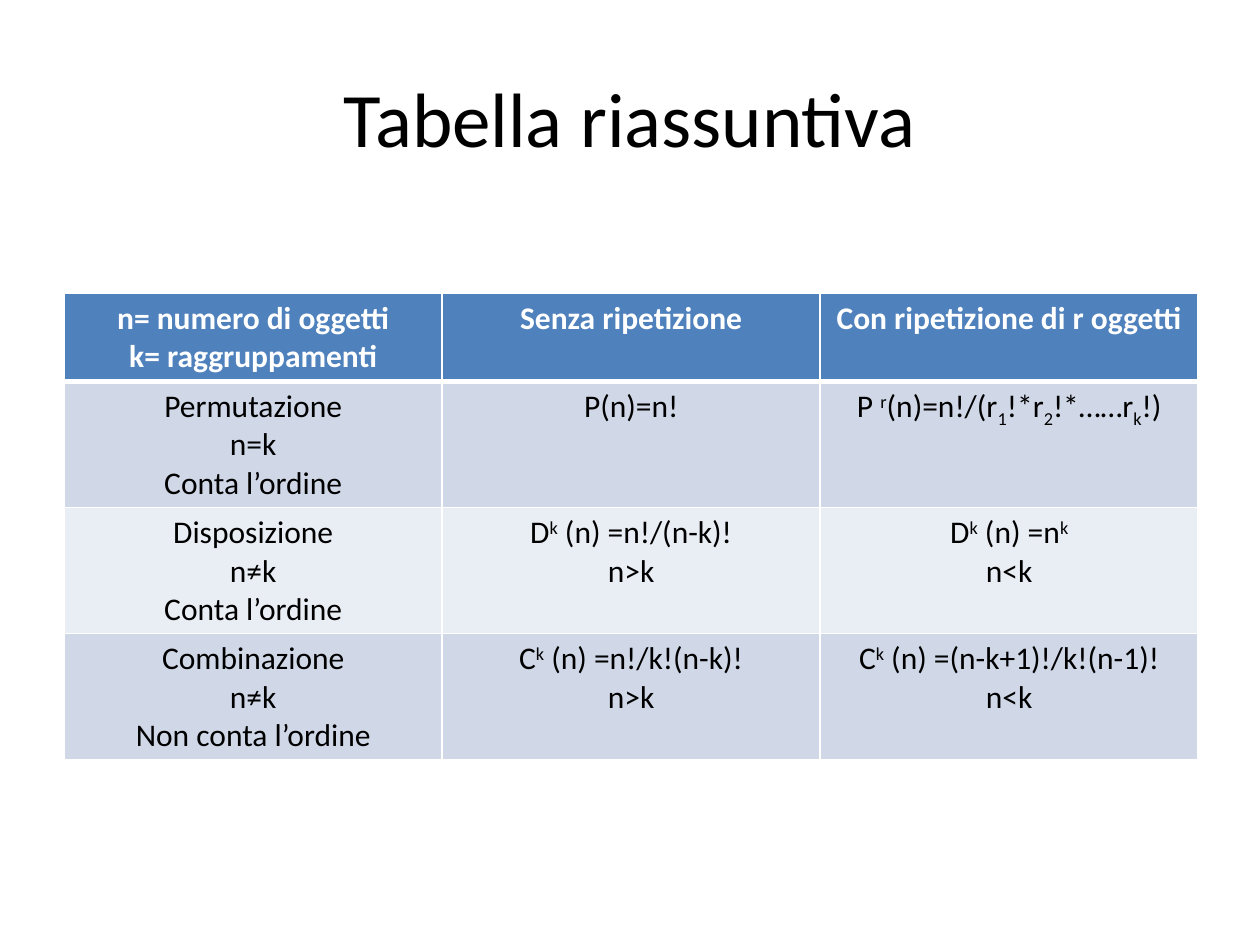
from lxml.etree import SubElement
from pptx import Presentation
from pptx.dml.color import RGBColor
from pptx.enum.text import MSO_ANCHOR, PP_ALIGN
from pptx.oxml.ns import qn
from pptx.util import Inches, Pt

WHITE = RGBColor(0xFF, 0xFF, 0xFF)
BLACK = RGBColor(0x00, 0x00, 0x00)
HEADER_BLUE = RGBColor(0x4F, 0x81, 0xBD)
BAND_DARK = RGBColor(0xD0, 0xD8, 0xE8)
BAND_LIGHT = RGBColor(0xE9, 0xED, 0xF4)

WIDTH, HEIGHT = Inches(10), Inches(7.5)
BASELINES = {"^": "30000", "_": "-25000"}

# Lines of each cell; "|" parts the runs, "^" raises a run and "_" lowers it
FORMULAS = [
    [["n= numero di oggetti", "k= raggruppamenti"],
     ["Senza ripetizione"],
     ["Con ripetizione di r oggetti"]],
    [["Permutazione", "n=k", "Conta l’ordine"],
     ["P(n)=n!"],
     ["P |^r|(n)=n!/(r|_1|!*r|_2|!*……r|_k|!)"]],
    [["Disposizione", "n≠k", "Conta l’ordine"],
     ["D|^k| (n) =n!/(n-k)!", "n>k"],
     ["D|^k| (n) =n|^k", "n<k"]],
    [["Combinazione", "n≠k", "Non conta l’ordine"],
     ["C|^k| (n) =n!/k!(n-k)!", "n>k"],
     ["C|^k| (n) =(n-k+1)!/k!(n-1)!", "n<k"]],
]


class SlideBuilder:
    """Holds the text style and the current slide; lengths are shares of it."""

    font_name = "Calibri"

    def __init__(self, slide):
        self.slide = slide

    def place(self, left, top, width, height):
        return (round(left * WIDTH), round(top * HEIGHT),
                round(width * WIDTH), round(height * HEIGHT))

    def fill_text(self, frame, lines, size, color, bold=False):
        for index, line in enumerate(lines):
            paragraph = frame.add_paragraph() if index else frame.paragraphs[0]
            paragraph.alignment = PP_ALIGN.CENTER
            font = paragraph.font
            font.name, font.size, font.bold = self.font_name, Pt(size), bold
            font.color.rgb = color
            for part in line.split("|"):
                run = paragraph.add_run()
                run.text = part.lstrip("^_")
                if part[0] in BASELINES:
                    run._r.get_or_add_rPr().set("baseline", BASELINES[part[0]])

    def title(self, text, box):
        frame = self.slide.shapes.add_textbox(*self.place(*box)).text_frame
        frame.word_wrap = True
        frame.vertical_anchor = MSO_ANCHOR.MIDDLE
        self.fill_text(frame, [text], 44, BLACK)

    def borders(self, cell, widths):
        properties = cell._tc.get_or_add_tcPr()
        for index, (side, width) in enumerate(widths.items()):
            line = SubElement(properties, qn(f"a:ln{side}"), w=str(Pt(width)))
            fill = SubElement(line, qn("a:solidFill"))
            SubElement(fill, qn("a:srgbClr"), val=str(WHITE))
            properties.insert(index, line)  # lines come before the cell fill

    def table(self, rows, box, heights):
        grid = self.slide.shapes.add_table(
            len(rows), len(rows[0]), *self.place(*box)).table
        for r, (row, height) in enumerate(zip(rows, heights)):
            header = r == 0
            grid.rows[r].height = round(height * HEIGHT)
            band = HEADER_BLUE if header else BAND_DARK if r % 2 else BAND_LIGHT
            for c, lines in enumerate(row):
                cell = grid.cell(r, c)
                cell.fill.solid()
                cell.fill.fore_color.rgb = band
                self.borders(cell, {"L": 1, "R": 1, "T": 3 if r == 1 else 1,
                                    "B": 3 if header else 1})
                self.fill_text(cell.text_frame, lines, 18,
                               WHITE if header else BLACK, bold=header)


def main():
    deck = Presentation()
    deck.slide_width, deck.slide_height = WIDTH, HEIGHT
    builder = SlideBuilder(deck.slides.add_slide(deck.slide_layouts[6]))

    # Heading
    builder.title("Tabella riassuntiva", (0.05, 0.04, 0.9, 1 / 6))

    # Summary of formulas: a two-line header above three-line rows
    header, body = 0.7 / 7.5, 1 / 7.5
    heights = [header] + [body] * 3
    builder.table(FORMULAS, (0.051, 0.31, 0.9, sum(heights)), heights)

    deck.save("out.pptx")


if __name__ == "__main__":
    main()
